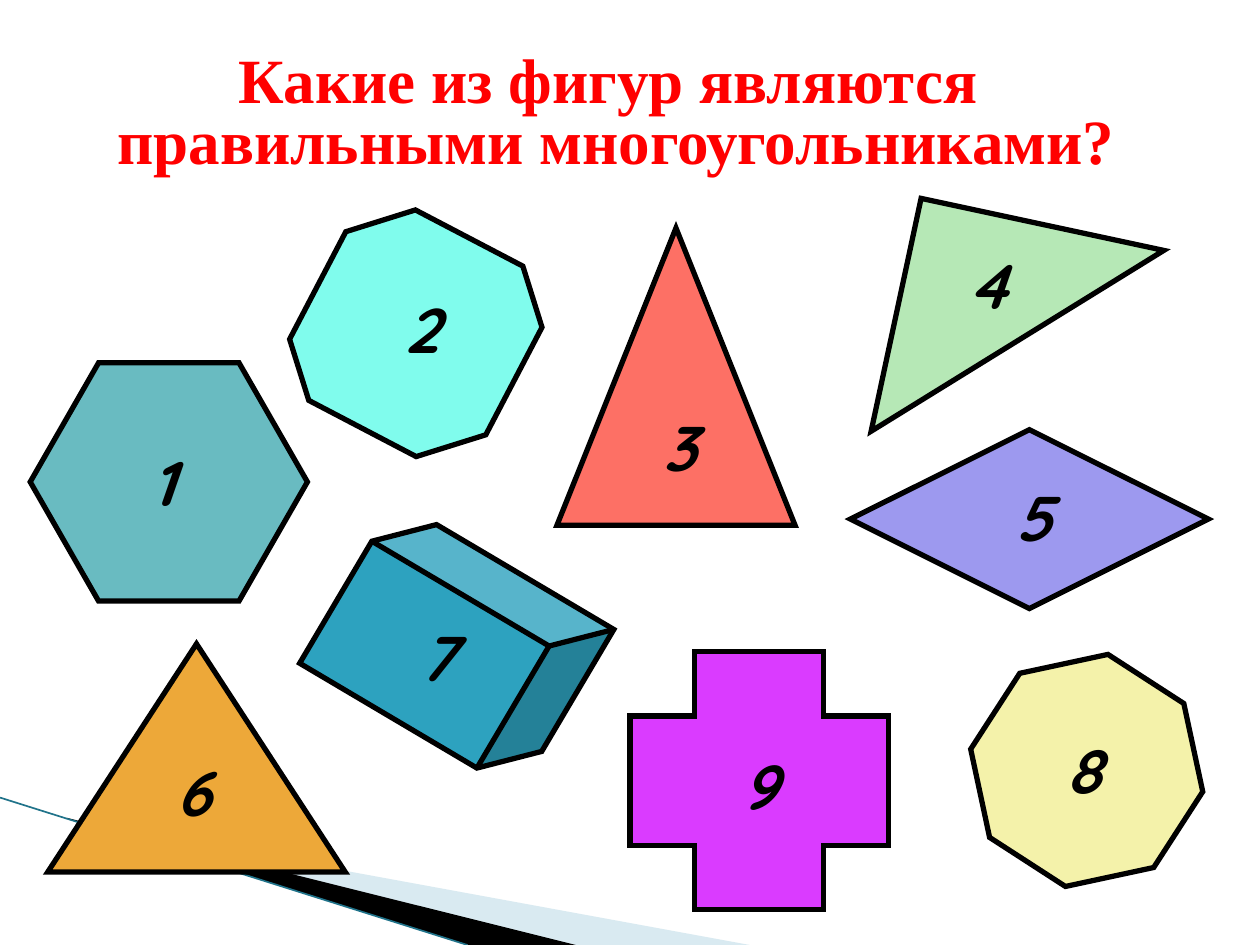
from lxml import etree
from pptx import Presentation
from pptx.dml.color import RGBColor
from pptx.enum.shapes import MSO_CONNECTOR, MSO_SHAPE
from pptx.enum.text import MSO_ANCHOR, MSO_AUTO_SIZE, PP_ALIGN
from pptx.oxml.ns import qn
from pptx.util import Inches, Pt

HEXAGON, OCTAGON = MSO_SHAPE.HEXAGON, MSO_SHAPE.OCTAGON
TRIANGLE, RIGHT_TRIANGLE = MSO_SHAPE.ISOSCELES_TRIANGLE, MSO_SHAPE.RIGHT_TRIANGLE
DIAMOND = MSO_SHAPE.FLOWCHART_DECISION
CUBE, CROSS = MSO_SHAPE.CUBE, MSO_SHAPE.CROSS
STRAIGHT = MSO_CONNECTOR.STRAIGHT
TOP, CENTER = MSO_ANCHOR.TOP, PP_ALIGN.CENTER
GROW = MSO_AUTO_SIZE.SHAPE_TO_FIT_TEXT

COLORS = {
    "black": "000000", "title": "FF0000", "band": "A0CBDC", "edge": "20738A",
    "teal": "69BBC1", "aqua": "80FCED", "coral": "FD7065", "green": "B6E8B6",
    "violet": "9D99EF", "orange": "EDA839", "blue": "2DA2BF",
    "yellow": "F4F2AA", "magenta": "DA3BFF",
}

# number, shape, box, rotation, first adjustment, colour, label position
FIGURES = [
    ("1", HEXAGON, (0.24, 2.88, 2.2, 1.89), 0, 0.287, "teal", (1.1, 3.47)),
    ("2", OCTAGON, (2.33, 1.71, 1.94, 1.87), 342.6, 0.364, "aqua", (3.11, 2.26)),
    ("3", TRIANGLE, (4.42, 1.81, 1.89, 2.36), 0, None, "coral", (5.16, 3.19)),
    ("4", RIGHT_TRIANGLE, (7.13, 1.72, 1.89, 1.97), 102.1, None, "green", (7.56, 1.91)),
    ("5", DIAMOND, (6.75, 3.41, 2.84, 1.42), 0, None, "violet", (7.96, 3.75)),
    ("6", TRIANGLE, (0.38, 5.11, 2.36, 1.81), 0, None, "orange", (1.3, 5.93)),
    ("7", CUBE, (2.62, 4.38, 2.01, 1.5), 30.6, None, "blue", (3.23, 4.86)),
    ("8", OCTAGON, (7.76, 5.25, 1.73, 1.73), 32.9, None, "yellow", (8.35, 5.76)),
    ("9", CROSS, (5, 5.17, 2.05, 2.05), 0, None, "magenta", (5.79, 5.88)),
]


def rgb(name):
    return RGBColor.from_string(COLORS[name])


def set_font(font, name, color):
    font.name, font.size, font.bold = name, Pt(36), True
    font.color.rgb = rgb(color)


def add_band(s, points, color, alpha=None):
    """Filled decorative outline; alpha is the opacity in percent."""
    points = [(Inches(x), Inches(y)) for x, y in points]
    builder = s.shapes.build_freeform(*points[0])
    builder.add_line_segments(points[1:], close=True)
    band = builder.convert_to_shape()
    band.shadow.inherit = False
    band.fill.solid()
    band.fill.fore_color.rgb = rgb(color)
    band.line.fill.background()
    if alpha is not None:
        clr = band.fill._xPr.find(".//" + qn("a:srgbClr"))
        etree.SubElement(clr, qn("a:alpha"), val=str(alpha * 1000))


def add_edge(s, start, end):
    edge = s.shapes.add_connector(STRAIGHT, *map(Inches, start + end))
    edge.line.color.rgb = rgb("edge")
    edge.line.width = Pt(0.95)
    etree.SubElement(edge._element.spPr, qn("a:effectLst"))


def add_figure(s, number, kind, box, rotation, adjustment, color, label_at):
    """Outlined figure grouped with its number."""
    group = s.shapes.add_group_shape()
    sp = group.shapes.add_shape(kind, *map(Inches, box))
    sp.rotation = rotation
    if adjustment is not None:
        sp.adjustments[0] = adjustment
    sp.shadow.inherit = False
    sp.fill.solid()
    sp.fill.fore_color.rgb = rgb(color)
    sp.line.color.rgb = rgb("black")
    sp.line.width = Pt(3)
    etree.SubElement(sp.line._ln, qn("a:miter"), lim="800000")

    label = group.shapes.add_textbox(*map(Inches, label_at + (0.39, 0.7)))
    tf = label.text_frame
    tf.word_wrap = True
    tf.auto_size = GROW
    tf.text = number
    font = tf.paragraphs[0].runs[0].font
    set_font(font, "Quicksand", "black")
    font.italic = True


def add_title(s, text):
    title = s.shapes.title
    title.left, title.top, title.width, title.height = map(Inches, (0.6, 0.39, 8.58, 1.07))
    tf = title.text_frame
    tf.word_wrap = True
    tf.auto_size = GROW
    tf.vertical_anchor = TOP
    tf.text = text
    p = tf.paragraphs[0]
    p.alignment = CENTER
    p.line_spacing = 0.8
    for r in p.runs:
        set_font(r.font, "Times New Roman", "title")


def main():
    prs = Presentation()
    prs.slide_width, prs.slide_height = Inches(10), Inches(7.5)
    s = prs.slides.add_slide(prs.slide_layouts[5])
    add_band(s, [(0.55, 6.51), (5.95, 7.5), (4.56, 7.5), (0.55, 6.5)], "band", 40)
    add_band(s, [(0.53, 6.49), (4.57, 7.5), (3.72, 7.5), (0.54, 6.5)], "black")
    add_edge(s, (0, 6.33), (3.71, 7.5))
    for figure in FIGURES:
        add_figure(s, *figure)
    add_title(s, "Какие из фигур являются \vправильными многоугольниками?")
    prs.save("out.pptx")


if __name__ == "__main__":
    main()
